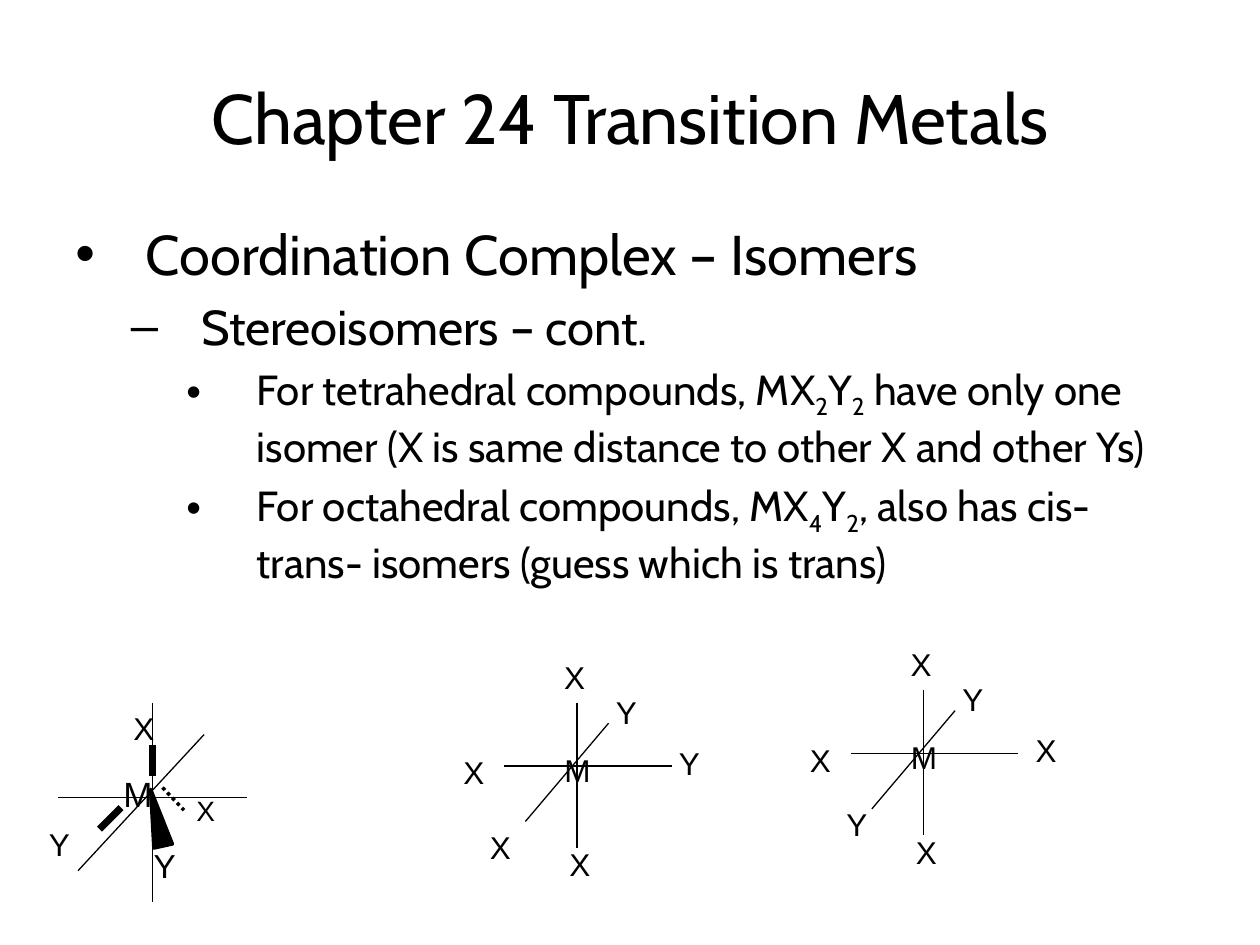
from typing import NamedTuple

from lxml import etree
from pptx import Presentation
from pptx.dml.color import RGBColor
from pptx.enum.dml import MSO_LINE
from pptx.enum.shapes import MSO_CONNECTOR, MSO_SHAPE
from pptx.enum.text import MSO_ANCHOR, PP_ALIGN
from pptx.oxml.ns import qn
from pptx.util import Emu, Pt

STRAIGHT = MSO_CONNECTOR.STRAIGHT
TRIANGLE = MSO_SHAPE.ISOSCELES_TRIANGLE
DOTTED = MSO_LINE.ROUND_DOT
CENTER = PP_ALIGN.CENTER
LEFT = PP_ALIGN.LEFT
TOP = MSO_ANCHOR.TOP
MIDDLE = MSO_ANCHOR.MIDDLE
BLACK = "000000"
EMU_PER_PX = 9144  # 100 px to the inch


class Bond(NamedTuple):
    x1: int
    y1: int
    x2: int
    y2: int
    width: float = 0.75
    dash: object = None


class Label(NamedTuple):
    text: str
    x: int
    y: int
    width: int = 50
    height: int = 40
    size: int = 18


class Bullet(NamedTuple):
    text: str  # "_" puts the next character in subscript
    mark: str
    indent: int
    size: int
    level: int


def px(value: int) -> Emu:
    return Emu(value * EMU_PER_PX)


def color(value: str) -> RGBColor:
    return RGBColor.from_string(value)


def add_span(para, text: str, size: int, font: str, subscript: bool = False) -> None:
    span = para.add_run()
    span.text = text
    span.font.size = Pt(size)
    span.font.name = font
    span.font.color.rgb = color(BLACK)
    if subscript:
        span.font._element.set("baseline", "-25000")


def add_box(shapes, x: int, y: int, width: int, height: int, anchor=TOP):
    frame = shapes.add_textbox(px(x), px(y), px(width), px(height)).text_frame
    frame.word_wrap = True
    frame.vertical_anchor = anchor
    return frame


def add_text(shapes, text: str, x: int, y: int, width: int, height: int, *,
             size: int, font: str = "Arial", align=LEFT, anchor=TOP) -> None:
    para = add_box(shapes, x, y, width, height, anchor).paragraphs[0]
    para.alignment = align
    add_span(para, text, size, font)


def add_bullet(para, bullet: Bullet, first: bool) -> None:
    para.level = bullet.level
    properties = para._p.get_or_add_pPr()
    properties.set("marL", str(px(bullet.indent)))
    properties.set("indent", str(px(-56)))
    if not first:
        para.space_before = Pt(bullet.size * 0.2)
    etree.SubElement(properties, qn("a:buFont")).set("typeface", "Arial")
    etree.SubElement(properties, qn("a:buChar")).set("char", bullet.mark)
    plain, *rest = bullet.text.split("_")
    add_span(para, plain, bullet.size, "Cabin")
    for piece in rest:
        add_span(para, piece[0], bullet.size, "Cabin", subscript=True)
        add_span(para, piece[1:], bullet.size, "Cabin")


def add_bond(shapes, bond: Bond, x: int = 0, y: int = 0) -> None:
    line = shapes.add_connector(STRAIGHT, px(x + bond.x1), px(y + bond.y1),
                                px(x + bond.x2), px(y + bond.y2))
    line.line.color.rgb = color(BLACK)
    line.line.width = Pt(bond.width)
    if bond.dash is not None:
        line.line.dash_style = bond.dash
    etree.SubElement(line._element.spPr, qn("a:effectLst"))


def add_label(shapes, label: Label, x: int = 0, y: int = 0) -> None:
    add_text(shapes, label.text, x + label.x, y + label.y,
             label.width, label.height, size=label.size)


def add_wedge(shapes, x: int, y: int, width: int, height: int, turn: float) -> None:
    wedge = shapes.add_shape(TRIANGLE, px(x), px(y), px(width), px(height))
    wedge.rotation = turn
    wedge.shadow.inherit = False
    wedge.fill.solid()
    wedge.fill.fore_color.rgb = color(BLACK)
    wedge.line.color.rgb = color(BLACK)
    wedge.line.width = Pt(2)


BULLETS = [
    Bullet("Coordination Complex – Isomers", "•", 56, 32, 0),
    Bullet("Stereoisomers – cont.", "–", 100, 28, 1),
    Bullet("For tetrahedral compounds, MX_2Y_2 have only one isomer "
           "(X is same distance to other X and other Ys)", "•", 144, 24, 2),
    Bullet("For octahedral compounds, MX_4Y_2, also has cis- trans- isomers "
           "(guess which is trans)", "•", 144, 24, 2),
]

TETRAHEDRAL_AXES = [
    Bond(121, 558, 121, 716), Bond(196, 633, 46, 633), Bond(162, 583, 62, 691),
]
TETRAHEDRAL_LABELS = [
    Label("M", 88, 608, 75, 44, 20), Label("Y", 29, 650, 75),
    Label("Y", 112, 666, 75, 42, 19), Label("X", 96, 558, 75),
    Label("X", 146, 625, 58, 37, 16),
]
TETRAHEDRAL_BONDS = [
    Bond(121, 591, 121, 616, 4), Bond(96, 641, 79, 658, 4),
    Bond(129, 625, 146, 643, 2, DOTTED),
]

# Octahedral parts are measured from the top of the vertical axis
OCTAHEDRAL_AXES = [
    Bond(0, 0, 0, 115), Bond(75, 50, -58, 50), Bond(25, 16, -41, 94),
]
OCTAHEDRAL_LABELS = [
    Label("M", -20, 33, 58), Label("X", -20, -41), Label("X", -100, 35, 42),
    Label("X", -16, 108), Label("Y", 21, -13),
]
CIS_LABELS = [Label("X", -79, 94, 42), Label("Y", 71, 28)]
TRANS_LABELS = [Label("X", 79, 27, 42), Label("Y", -71, 86)]


def add_octahedron(shapes, x: int, y: int, isomer_labels: list[Label]) -> None:
    for axis in OCTAHEDRAL_AXES:
        add_bond(shapes, axis, x, y)
    for label in OCTAHEDRAL_LABELS + isomer_labels:
        add_label(shapes, label, x, y)


def add_tetrahedron(shapes) -> None:
    for axis in TETRAHEDRAL_AXES:
        add_bond(shapes, axis)
    for label in TETRAHEDRAL_LABELS:
        add_label(shapes, label)
    for bond in TETRAHEDRAL_BONDS:
        add_bond(shapes, bond)
    add_wedge(shapes, 117, 626, 15, 46, 347.6)


def main() -> None:
    deck = Presentation()
    deck.slide_width, deck.slide_height = px(1000), px(750)
    page = deck.slides.add_slide(deck.slide_layouts[6])

    # Title and bullets
    add_text(page.shapes, "Chapter 24 Transition Metals", 50, 30, 900, 125,
             size=40, font="Cabin", align=CENTER, anchor=MIDDLE)
    body = add_box(page.shapes, 50, 169, 900, 314)
    for index, bullet in enumerate(BULLETS):
        para = body.add_paragraph() if index else body.paragraphs[0]
        add_bullet(para, bullet, first=index == 0)

    # Molecules
    add_tetrahedron(page.shapes.add_group_shape().shapes)
    add_octahedron(page.shapes.add_group_shape().shapes, 458, 558, CIS_LABELS)
    add_octahedron(page.shapes, 733, 548, TRANS_LABELS)

    deck.save("out.pptx")


if __name__ == "__main__":
    main()
